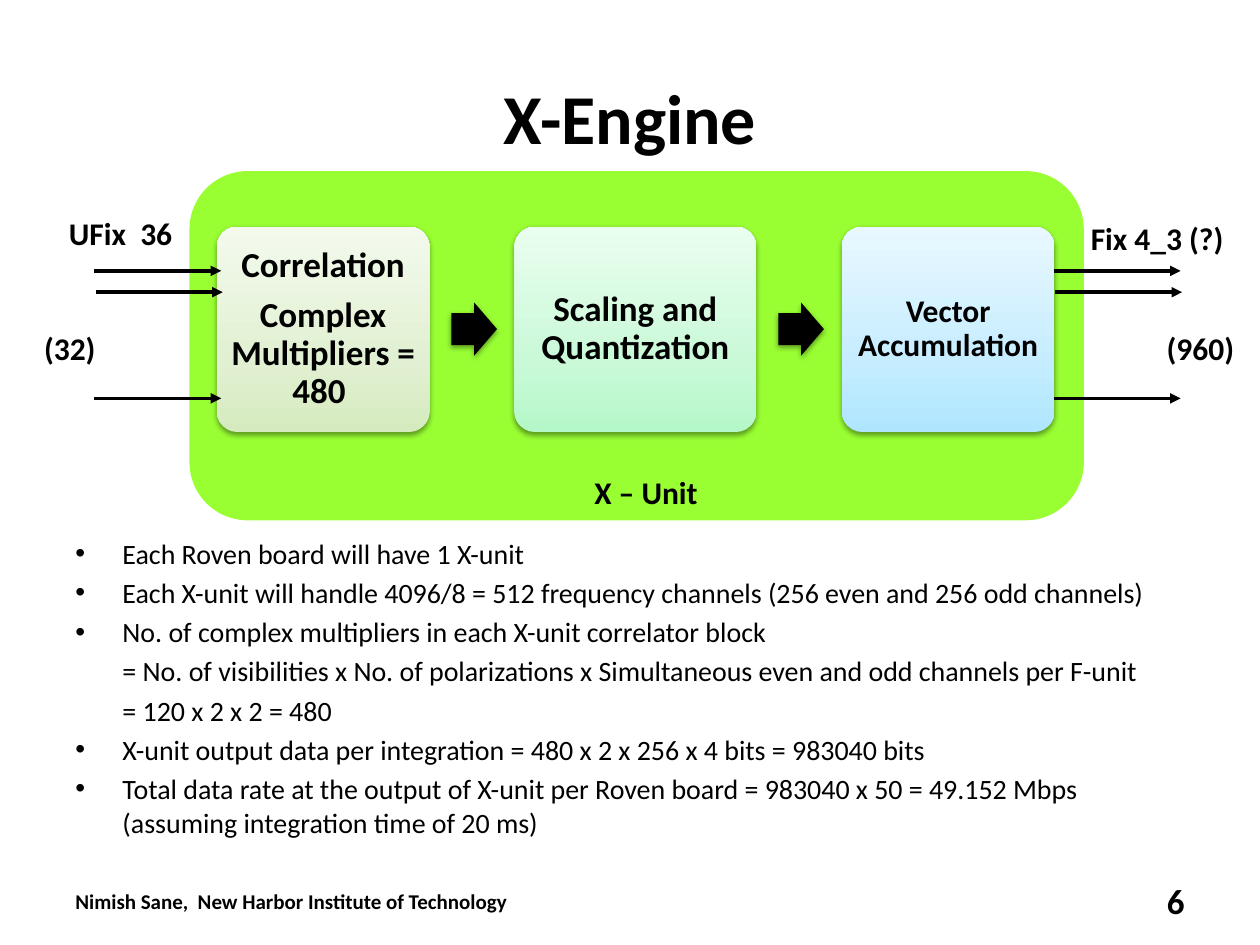
from copy import deepcopy

from lxml.etree import SubElement
from pptx import Presentation
from pptx.dml.color import RGBColor
from pptx.enum.shapes import MSO_CONNECTOR, MSO_SHAPE
from pptx.enum.text import MSO_ANCHOR, PP_ALIGN
from pptx.oxml.ns import qn
from pptx.util import Cm, Pt

BLACK = RGBColor(0x00, 0x00, 0x00)
LIME = RGBColor(0x99, 0xFF, 0x33)
OLIVE = [RGBColor(0xD5, 0xEB, 0xBF), RGBColor(0xE1, 0xF0, 0xD2), RGBColor(0xF3, 0xFA, 0xED)]
MINT = [RGBColor(0xB4, 0xF8, 0xC8), RGBColor(0xCA, 0xF9, 0xD8), RGBColor(0xEA, 0xFE, 0xEF)]
SKY = [RGBColor(0xAE, 0xE6, 0xFF), RGBColor(0xC6, 0xED, 0xFF), RGBColor(0xE9, 0xF8, 0xFF)]


class SlideBuilder:
    """Draws styled elements on one slide, with lengths in centimetres."""

    font = "Calibri"

    def __init__(self, slide):
        self.slide = slide

    def set_text(self, tf, lines, size, bold=True, align=PP_ALIGN.LEFT, anchor=MSO_ANCHOR.TOP):
        tf.word_wrap = True
        tf.vertical_anchor = anchor
        tf.text = "\n".join(lines)
        for p in tf.paragraphs:
            p.alignment = align
            for r in p.runs:
                r.font.name = self.font
                r.font.size = Pt(size)
                r.font.bold = bold
                r.font.color.rgb = BLACK

    def text(self, box, line, size, align=PP_ALIGN.LEFT, anchor=MSO_ANCHOR.TOP):
        tb = self.slide.shapes.add_textbox(*map(Cm, box))
        self.set_text(tb.text_frame, [line], size, align=align, anchor=anchor)

    def bullets(self, box, items, size, indent):
        tf = self.slide.shapes.add_textbox(*map(Cm, box)).text_frame
        self.set_text(tf, [line for line, _ in items], size, bold=False)
        for p, (_, bulleted) in zip(tf.paragraphs, items):
            p.space_before = Pt(size * 0.2)
            pPr = p._p.get_or_add_pPr()
            pPr.set("marL", str(Cm(indent)))
            pPr.set("indent", str(-Cm(indent) if bulleted else 0))
            if bulleted:
                SubElement(pPr, qn("a:buFont"), typeface="Arial")
                SubElement(pPr, qn("a:buChar"), char="•")

    def shape(self, kind, box, color):
        s = self.slide.shapes.add_shape(kind, *map(Cm, box))
        s.shadow.inherit = False
        s.fill.solid()
        s.fill.fore_color.rgb = color
        s.line.fill.background()
        return s

    def drop_shadow(self, s):
        effects = s._element.spPr.find(qn("a:effectLst"))
        shadow = SubElement(effects, qn("a:outerShdw"), blurRad=str(Pt(3.1)),
                            dist=str(Pt(1.6)), dir="5400000", rotWithShape="0")
        color = SubElement(shadow, qn("a:srgbClr"), val=str(BLACK))
        SubElement(color, qn("a:alpha"), val="38000")

    def stage(self, box, lines, size, colors):
        s = self.shape(MSO_SHAPE.ROUNDED_RECTANGLE, box, colors[0])
        s.adjustments[0] = 0.1
        s.fill.gradient()
        s.fill.gradient_angle = 90
        stops = s._element.spPr.find(qn("a:gradFill")).find(qn("a:gsLst"))
        stops.insert(1, deepcopy(stops[0]))
        for stop, position, color in zip(s.fill.gradient_stops, (0, 0.35, 1), colors):
            stop.position = position
            stop.color.rgb = color
        self.drop_shadow(s)
        tf = s.text_frame
        tf.margin_left = tf.margin_right = tf.margin_top = tf.margin_bottom = Cm(0.08)
        self.set_text(tf, lines, size, align=PP_ALIGN.CENTER, anchor=MSO_ANCHOR.MIDDLE)
        for p in tf.paragraphs:
            p.line_spacing = 0.9
            p.space_after = Pt(size * 0.35)

    def block_arrow(self, box):
        s = self.shape(MSO_SHAPE.RIGHT_ARROW, box, BLACK)
        s.adjustments[0] = 0.6
        self.drop_shadow(s)

    def signal(self, x, y, length):
        c = self.slide.shapes.add_connector(
            MSO_CONNECTOR.STRAIGHT, Cm(x), Cm(y), Cm(x + length), Cm(y))
        c.line.color.rgb = BLACK
        c.line.width = Pt(2)
        spPr = c._element.spPr
        SubElement(spPr.find(qn("a:ln")), qn("a:tailEnd"), type="triangle")
        SubElement(spPr, qn("a:effectLst"))


def main():
    prs = Presentation()
    prs.slide_width, prs.slide_height = Cm(25.4), Cm(19.05)
    b = SlideBuilder(prs.slides.add_slide(prs.slide_layouts[6]))

    b.text((1.27, 0.76, 22.86, 3.18), "X-Engine", 40, PP_ALIGN.CENTER, MSO_ANCHOR.MIDDLE)
    b.bullets((1.27, 10.69, 22.86, 6.32), [
        ("Each Roven board will have 1 X-unit", True),
        ("Each X-unit will handle 4096/8 = 512 frequency channels "
         "(256 even and 256 odd channels)", True),
        ("No. of complex multipliers in each X-unit correlator block", True),
        ("= No. of visibilities x No. of polarizations x "
         "Simultaneous even and odd channels per F-unit", False),
        ("= 120 x 2 x 2 = 480", False),
        ("X-unit output data per integration = 480 x 2 x 256 x 4 bits = 983040 bits", True),
        ("Total data rate at the output of X-unit per Roven board = 983040 x 50 = "
         "49.152 Mbps (assuming integration time of 20 ms)", True),
    ], 16, 0.95)
    b.text((1.27, 17.65, 9.63, 1.02), "Nimish Sane,  New Harbor Institute of Technology", 12,
           anchor=MSO_ANCHOR.MIDDLE)
    b.text((18.2, 17.65, 5.93, 1.02), "6", 20, PP_ALIGN.RIGHT, MSO_ANCHOR.MIDDLE)

    b.shape(MSO_SHAPE.ROUNDED_RECTANGLE, (3.82, 3.45, 18.03, 7.04), LIME)
    stages = [
        (4.37, 4.29, ["Correlation", "Complex Multipliers = 480 "], 20, OLIVE),
        (10.37, 4.88, ["Scaling and Quantization"], 20, MINT),
        (16.97, 4.29, ["Vector Accumulation"], 18, SKY),
    ]
    for x, width, lines, size, colors in stages:
        b.stage((x, 4.57, width, 4.14), lines, size, colors)
    for x, width, *_ in stages[:-1]:
        b.block_arrow((x + width + 0.44, 6.1, 0.92, 1.07))
    b.text((9.63, 9.42, 6.93, 1.02), "X – Unit ", 18, PP_ALIGN.CENTER)

    for x in (1.9, 21.24):
        for dx, y in ((0, 5.46), (0.03, 5.89), (0, 8.03)):
            b.signal(x + dx, y, 2.56)
    for x, y, width, label in (
        (1.14, 4.19, 2.7, "UFix  36"),
        (21.74, 4.29, 3.23, "Fix 4_3 (?)"),
        (0.64, 6.5, 1.7, "(32)"),
        (23.27, 6.5, 2.03, "(960)"),
    ):
        b.text((x, y, width, 1.02), label, 18)

    prs.save("out.pptx")


if __name__ == "__main__":
    main()
